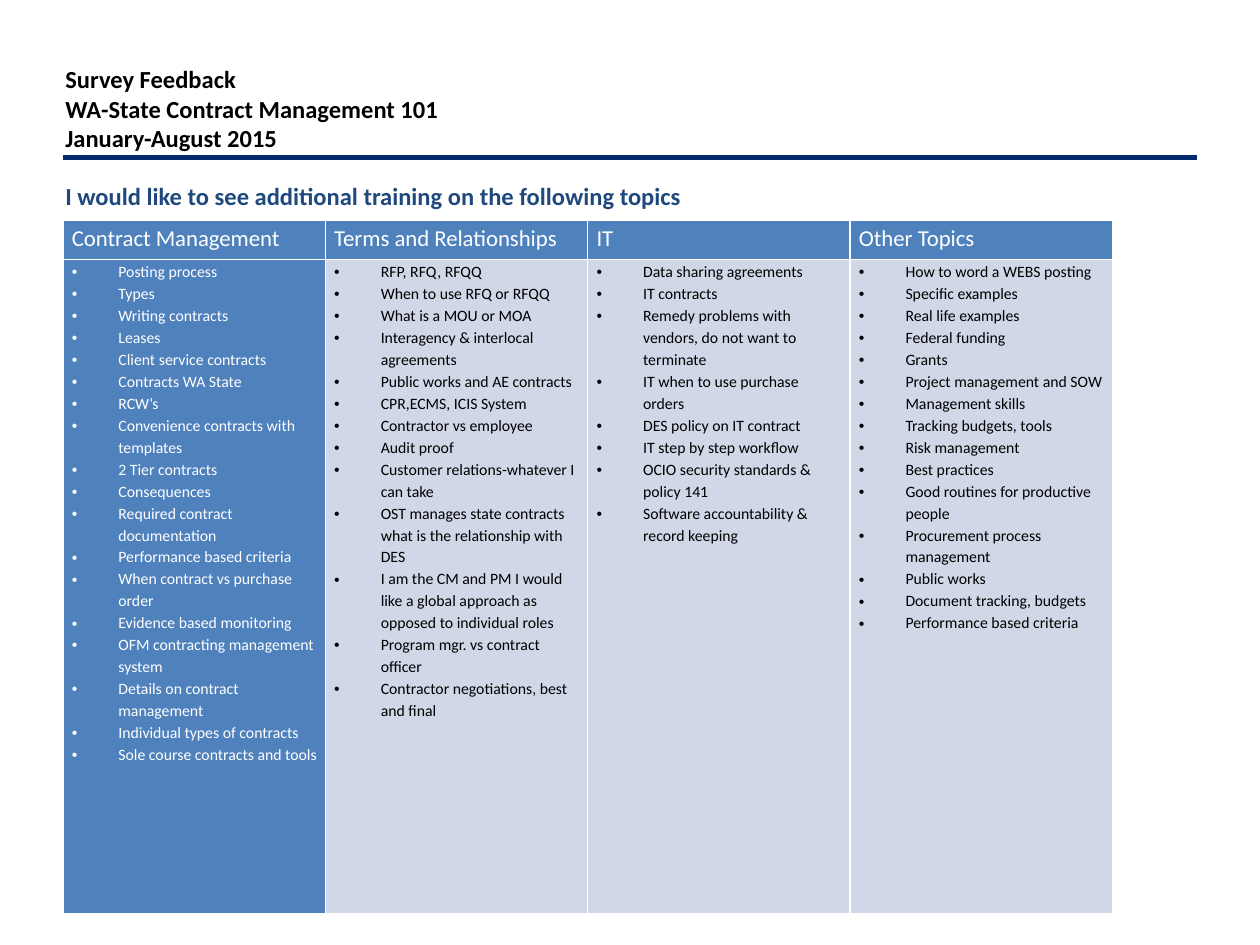
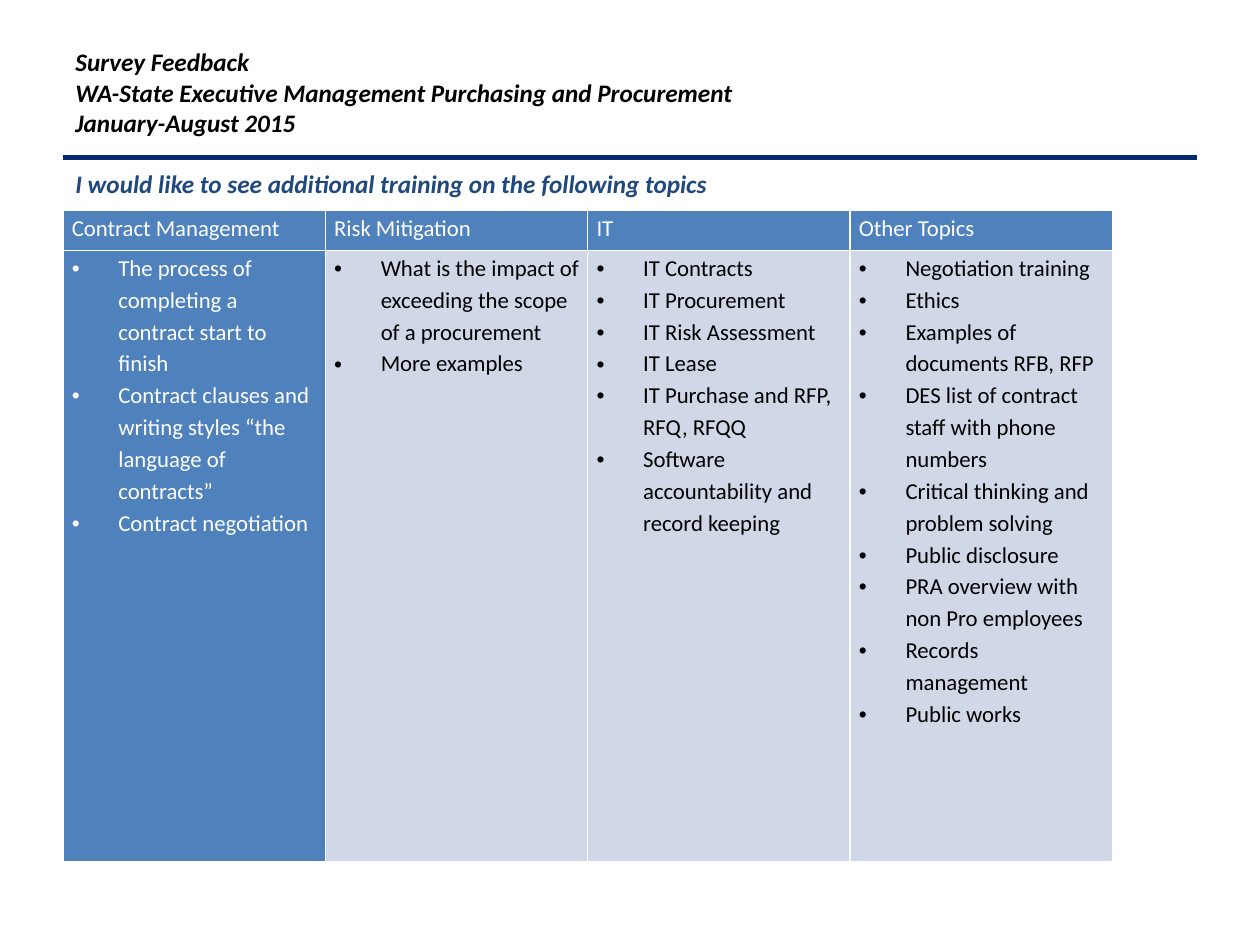
from lxml.etree import SubElement
from pptx import Presentation
from pptx.dml.color import RGBColor
from pptx.enum.shapes import MSO_CONNECTOR
from pptx.enum.text import MSO_ANCHOR
from pptx.oxml.ns import qn
from pptx.util import Inches, Pt

# Content
PROMPT = "I would like to see additional training on the following topics"
SLIDES = [
    {
        "title": ["Survey Feedback", "WA-State Contract Management 101", "January-August 2015"],
        "title_box": (0.42, 0.22, 8.42, 1.51), "title_size": 14, "italic": False, "gap": 16,
        "table_top": 1.75, "rows": (0.31, 5.19), "body_size": 9,
        "topics": {
            "Contract Management": [
                "Posting process", "Types", "Writing contracts", "Leases",
                "Client service contracts", "Contracts WA State", "RCW’s",
                "Convenience contracts with templates", "2 Tier contracts", "Consequences",
                "Required contract documentation", "Performance based criteria",
                "When contract vs purchase order", "Evidence based monitoring",
                "OFM contracting management system", "Details on contract management",
                "Individual types of contracts", "Sole course contracts and tools",
            ],
            "Terms and Relationships": [
                "RFP, RFQ, RFQQ", "When to use RFQ or RFQQ", "What is a MOU or MOA",
                "Interagency & interlocal agreements", "Public works and AE contracts",
                "CPR,ECMS, ICIS System", "Contractor vs employee", "Audit proof",
                "Customer relations-whatever I can take",
                "OST manages state contracts what is the relationship with DES",
                "I am the CM and PM I would like a global approach as opposed to individual roles",
                "Program mgr. vs contract officer", "Contractor negotiations, best and final",
            ],
            "IT": [
                "Data sharing agreements", "IT contracts",
                "Remedy problems with vendors, do not want to terminate",
                "IT when to use purchase orders", "DES policy on IT contract",
                "IT step by step workflow", "OCIO security standards & policy 141",
                "Software accountability & record keeping",
            ],
            "Other Topics": [
                "How to word a WEBS posting", "Specific examples", "Real life examples",
                "Federal funding", "Grants", "Project management and SOW", "Management skills",
                "Tracking budgets, tools", "Risk management", "Best practices",
                "Good routines for productive people", "Procurement process management",
                "Public works", "Document tracking, budgets", "Performance based criteria",
            ],
        },
    },
    {
        "title": ["Survey Feedback", "WA-State Executive Management Purchasing and Procurement",
                  "January-August 2015"],
        "title_box": (0.5, 0.08, 9, 1.5), "title_size": 14.4, "italic": True, "gap": 17.5,
        "table_top": 1.67, "rows": (0.32, 4.85), "body_size": 13,
        "topics": {
            "Contract Management": [
                "The process of completing a contract start to finish",
                "Contract clauses and writing styles “the language of contracts”",
                "Contract negotiation",
            ],
            "Risk Mitigation": [
                "What is the impact of exceeding the scope of a procurement", "More examples",
            ],
            "IT": [
                "IT Contracts", "IT Procurement", "IT Risk Assessment", "IT Lease",
                "IT Purchase and RFP, RFQ, RFQQ", "Software accountability and record keeping",
            ],
            "Other Topics": [
                "Negotiation training", "Ethics", "Examples of documents RFB, RFP",
                "DES list of contract staff with phone numbers",
                "Critical thinking and problem solving", "Public disclosure",
                "PRA overview with non Pro employees", "Records management", "Public works",
            ],
        },
    },
]

# Shared look
FONT = "Calibri"
BLACK = RGBColor(0x00, 0x00, 0x00)
WHITE = RGBColor(0xFF, 0xFF, 0xFF)
NAVY = RGBColor(0x03, 0x2B, 0x6D)
PROMPT_BLUE = RGBColor(0x1F, 0x49, 0x7D)
HEADER_BLUE = RGBColor(0x4F, 0x81, 0xBD)
PALE_BLUE = RGBColor(0xD0, 0xD8, 0xE8)
TABLE_LEFT, TABLE_WIDTH = 0.5, 8.33
HEADER_SIZE = 13
INDENT = Inches(0.37)


def write_lines(tf, lines, size, color, bold=False, italic=False):
    """Write one paragraph per line and return the paragraphs."""
    for i, line in enumerate(lines):
        p = tf.paragraphs[0] if i == 0 else tf.add_paragraph()
        r = p.add_run()
        r.text = line
        r.font.color.rgb = color
        fmt = {"name": FONT, "size": Pt(size), "bold": bold, "italic": italic}
        for key, value in fmt.items():
            setattr(r.font, key, value)
    return tf.paragraphs


def add_bullet(p):
    pPr = p._p.get_or_add_pPr()
    pPr.set("marL", str(INDENT))
    pPr.set("indent", str(-INDENT))
    SubElement(pPr, qn("a:buFont")).set("typeface", "Arial")
    SubElement(pPr, qn("a:buChar")).set("char", "•")


def set_borders(cell):
    tcPr = cell._tc.get_or_add_tcPr()
    for side in "LRTB":
        ln = SubElement(tcPr, qn("a:ln" + side), w=str(Pt(1)))
        fill = SubElement(ln, qn("a:solidFill"))
        SubElement(fill, qn("a:srgbClr")).set("val", str(WHITE))


def fill_cell(cell, lines, size, color, background, bulleted=False):
    margins = {"margin_left": 0.07, "margin_right": 0.06, "margin_top": 0, "margin_bottom": 0}
    for key, value in margins.items():
        setattr(cell, key, Inches(value))
    set_borders(cell)
    cell.fill.solid()
    cell.fill.fore_color.rgb = background
    for p in write_lines(cell.text_frame, lines, size, color):
        p.line_spacing = 1.15
        if bulleted:
            add_bullet(p)


def add_rule(s):
    rule = s.shapes.add_connector(MSO_CONNECTOR.STRAIGHT, Inches(0.5), Inches(1.25),
                                  Inches(9.5), Inches(1.25))
    rule.line.color.rgb = NAVY
    rule.line.width = Pt(3)
    SubElement(rule._element.spPr, qn("a:effectLst"))


def add_title(s, data):
    tf = s.shapes.add_textbox(*map(Inches, data["title_box"])).text_frame
    tf.word_wrap = True
    tf.vertical_anchor = MSO_ANCHOR.TOP
    tf.margin_top = Inches(0.29)
    lines = data["title"] + [PROMPT]
    prompt = write_lines(tf, lines, data["title_size"], BLACK, True, data["italic"])[-1]
    prompt.space_before = Pt(data["gap"])
    prompt.runs[0].font.color.rgb = PROMPT_BLUE


def add_topics(s, data):
    topics, heights = data["topics"], data["rows"]
    table = s.shapes.add_table(2, len(topics), Inches(TABLE_LEFT), Inches(data["table_top"]),
                               Inches(TABLE_WIDTH), Inches(sum(heights))).table
    table.first_row = table.horz_banding = False
    for row, height in zip(table.rows, heights):
        row.height = Inches(height)
    for i, (topic, items) in enumerate(topics.items()):
        table.columns[i].width = Inches(TABLE_WIDTH / len(topics))
        fill_cell(table.cell(0, i), [topic], HEADER_SIZE, WHITE, HEADER_BLUE)
        color, background = (WHITE, HEADER_BLUE) if i == 0 else (BLACK, PALE_BLUE)
        fill_cell(table.cell(1, i), items, data["body_size"], color, background, bulleted=True)


def main():
    prs = Presentation()
    prs.slide_width, prs.slide_height = Inches(10), Inches(7.5)
    for data in SLIDES:
        s = prs.slides.add_slide(prs.slide_layouts[6])
        add_rule(s)
        add_title(s, data)
        add_topics(s, data)
    prs.save("out.pptx")


if __name__ == "__main__":
    main()
